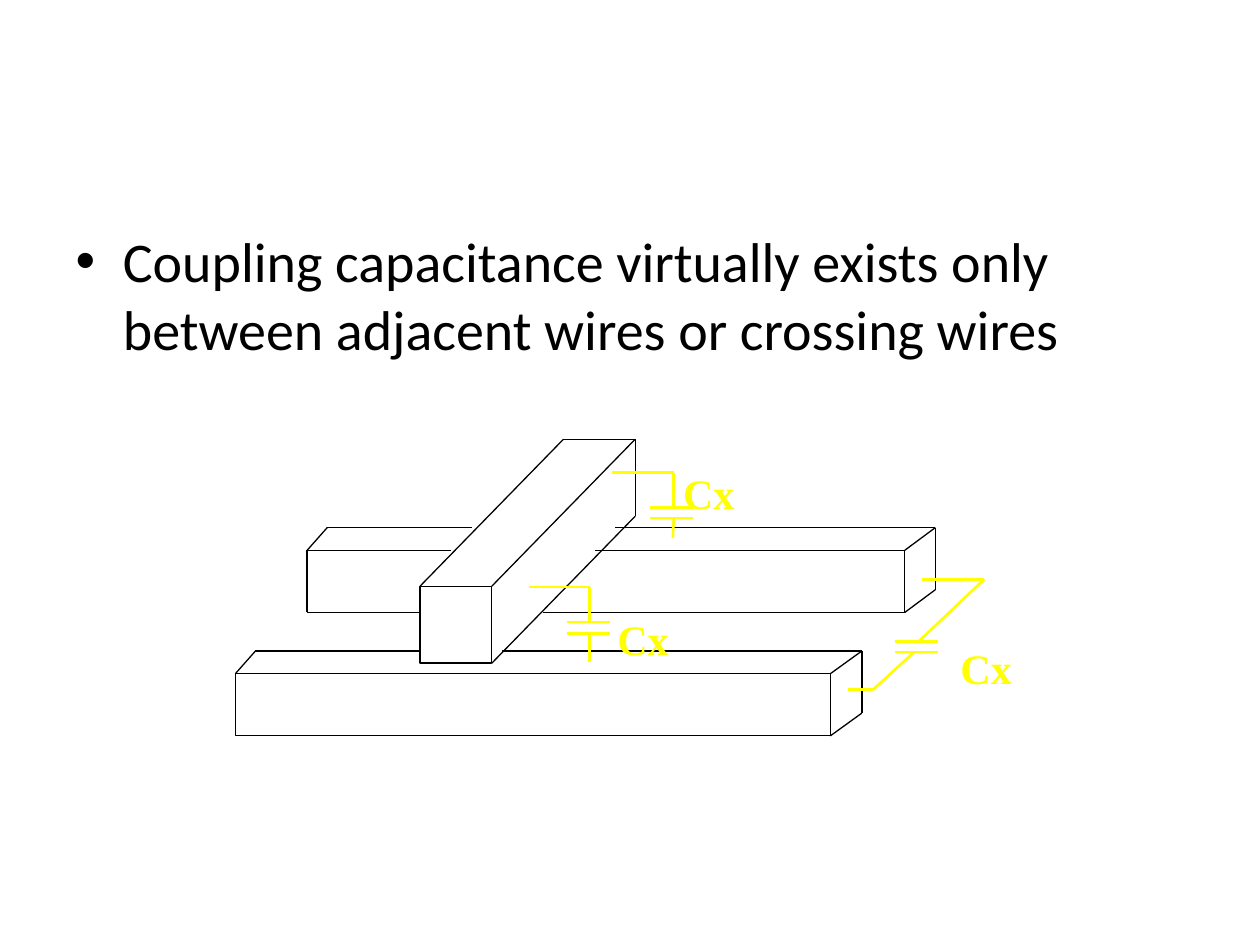
from dataclasses import dataclass
from itertools import pairwise

from lxml.etree import SubElement
from pptx import Presentation
from pptx.dml.color import RGBColor
from pptx.enum.shapes import MSO_CONNECTOR as Connector, MSO_SHAPE as Shape
from pptx.enum.text import MSO_AUTO_SIZE as AutoSize, PP_ALIGN as Align
from pptx.oxml.ns import qn
from pptx.shapes.shapetree import GroupShapes
from pptx.util import Pt

COLORS = {"wire": "000000", "capacitor": "FFFF00", "text": "000000"}
WIRE_WIDTH, CAPACITOR_WIDTH = 0.75, 1.5
PLATE_LENGTH = 24.5
LABEL_SIZE = (44, 36)

Point = tuple[float, float]


@dataclass(frozen=True)
class Wire:
    """A bar in perspective: an optional front face and the edges behind it."""
    face: tuple[float, float, float, float] | None
    edges: list[list[Point]]


@dataclass(frozen=True)
class Capacitor:
    """Two plates, one at the end of the lead and one at the start of the tail."""
    lead: list[Point]
    tail: list[Point]
    plate_left: float
    label_at: Point


WIRES = [
    Wire((240, 335, 41, 44), [  # crossing wire
        [(240, 335), (322, 251), (363, 251), (363, 295), (281, 379)],
        [(281, 335), (363, 251)],
    ]),
    Wire((134.5, 385, 340, 35.5), [  # front wire
        [(134.5, 385), (146, 372), (240.5, 372)],
        [(287, 372), (492.5, 372), (492.5, 407.5), (474.5, 420.5)],
        [(474.5, 385), (492.5, 372)],
    ]),
    Wire(None, [  # back wire, partly hidden by the crossing wire
        [(258, 314.5), (175.5, 314.5), (187, 301.5), (269.5, 301.5)],
        [(351.5, 301.5), (534.5, 301.5), (534.5, 337), (517, 350)],
        [(340, 314.5), (517, 314.5), (534.5, 301.5)],
        [(175.5, 314.5), (175.5, 350), (240.5, 350)],
        [(310.5, 350), (517, 350), (517, 314.5)],
    ]),
]

CAPACITORS = [
    Capacitor([(350, 270), (385, 270), (385, 290)],
              [(385, 296), (384.5, 307.5)], 371.5, (383, 263.5)),
    Capacitor([(302.5, 335.5), (337, 335.5), (337, 355.5)],
              [(337, 362), (337, 378)], 324, (345.5, 347)),
    Capacitor([(527, 331), (562.5, 331), (525, 366.5)],
              [(522.5, 372.5), (499, 394), (484.5, 394)], 511.5, (541.5, 363.5)),
]


def rgb(name: str) -> RGBColor:
    return RGBColor.from_string(COLORS[name])


def add_path(shapes: GroupShapes, points: list[Point], color: str, width: float) -> None:
    """Join consecutive points with straight connectors."""
    for start, end in pairwise(points):
        line = shapes.add_connector(Connector.STRAIGHT, *map(Pt, start + end))
        line.line.color.rgb = rgb(color)
        line.line.width = Pt(width)
        SubElement(line._element.spPr, qn("a:effectLst"))


def add_wire(shapes: GroupShapes, wire: Wire) -> None:
    if wire.face:
        face = shapes.add_shape(Shape.RECTANGLE, *map(Pt, wire.face))
        face.shadow.inherit = False
        face.fill.background()
        face.line.color.rgb = rgb("wire")
        face.line.width = Pt(WIRE_WIDTH)
    for edge in wire.edges:
        add_path(shapes, edge, "wire", WIRE_WIDTH)


def add_capacitor(shapes: GroupShapes, cap: Capacitor) -> None:
    left, right = cap.plate_left, cap.plate_left + PLATE_LENGTH
    plates = [[(left, y), (right, y)] for y in (cap.lead[-1][1], cap.tail[0][1])]
    for points in (cap.lead, *plates, cap.tail):
        add_path(shapes, points, "capacitor", CAPACITOR_WIDTH)


def add_label(shapes: GroupShapes, at: Point) -> None:
    tf = shapes.add_textbox(*map(Pt, at + LABEL_SIZE)).text_frame
    tf.word_wrap = False
    tf.auto_size = AutoSize.SHAPE_TO_FIT_TEXT
    p = tf.paragraphs[0]
    p.alignment = Align.CENTER
    r = p.add_run()
    r.text = "Cx"
    r.font.name, r.font.size, r.font.bold = "Times New Roman", Pt(24), True
    r.font.color.rgb = rgb("capacitor")


def add_statement(s) -> None:
    body = s.placeholders[1]
    body.left, body.top, body.width, body.height = map(Pt, (36, 126, 648, 356.4))
    r = body.text_frame.paragraphs[0].add_run()
    r.text = ("Coupling capacitance virtually exists only "
              "between adjacent wires or crossing wires")
    r.font.name, r.font.size = "Calibri", Pt(32)
    r.font.color.rgb = rgb("text")


def main() -> None:
    prs = Presentation()
    prs.slide_width, prs.slide_height = Pt(720), Pt(540)
    s = prs.slides.add_slide(prs.slide_layouts[1])
    title = s.shapes.title._element
    title.getparent().remove(title)
    add_statement(s)

    diagram = s.shapes.add_group_shape().shapes
    for wire in WIRES:
        add_wire(diagram, wire)
    for cap in CAPACITORS:
        add_capacitor(diagram, cap)
    for cap in CAPACITORS:
        add_label(diagram, cap.label_at)
    prs.save("out.pptx")


if __name__ == "__main__":
    main()
